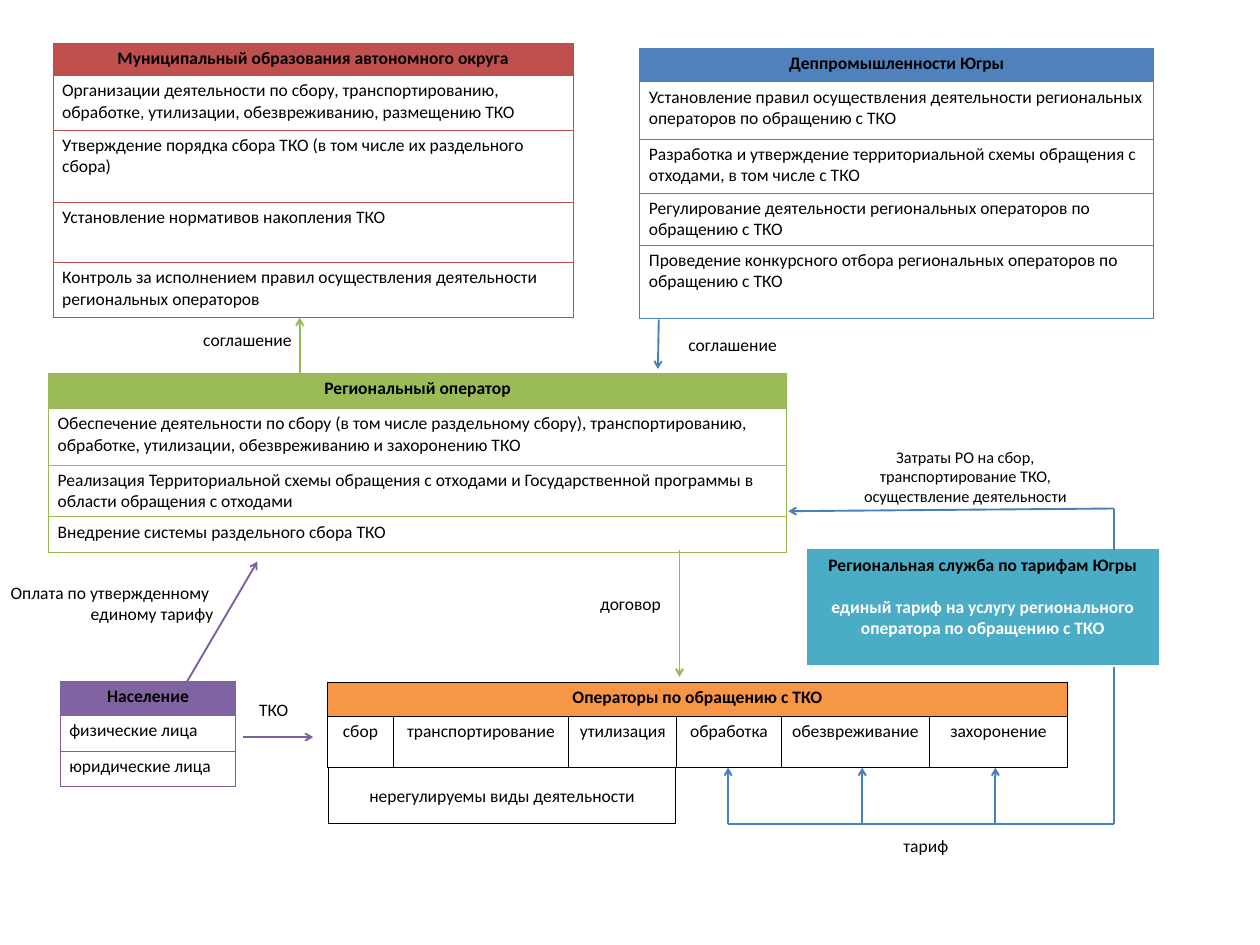
from lxml import etree
from pptx import Presentation
from pptx.dml.color import RGBColor
from pptx.enum.shapes import MSO_CONNECTOR, MSO_SHAPE
from pptx.enum.text import MSO_ANCHOR, PP_ALIGN
from pptx.oxml.ns import qn
from pptx.util import Inches, Pt

LEFT, CENTER, RIGHT = PP_ALIGN.LEFT, PP_ALIGN.CENTER, PP_ALIGN.RIGHT
TOP, MIDDLE = MSO_ANCHOR.TOP, MSO_ANCHOR.MIDDLE
STRAIGHT = MSO_CONNECTOR.STRAIGHT
RECTANGLE = MSO_SHAPE.RECTANGLE
BLANK_LAYOUT = 6
FONT = "Calibri"
BLACK, WHITE = "000000", "FFFFFF"
BLUE, GREEN, PURPLE = "4B7EBC", "98B955", "7D60A0"
RED, TEAL = "BF4C48", "46AAC5"


def color(value):
    return RGBColor.from_string(value)


def write(frame, text, size=14, bold=False, ink=BLACK, align=LEFT):
    for index, line in enumerate(text.split("\n")):
        paragraph = frame.paragraphs[0] if index == 0 else frame.add_paragraph()
        paragraph.alignment = align
        run = paragraph.add_run()
        run.text = line
        run.font.name = FONT
        run.font.size = Pt(size)
        run.font.bold = bold
        run.font.color.rgb = color(ink)


def add_label(slide, text, left, top, width, height, wrap=True, margin=0.1, **text_format):
    label = slide.shapes.add_textbox(Inches(left), Inches(top), Inches(width), Inches(height))
    frame = label.text_frame
    frame.word_wrap = wrap
    frame.margin_left = frame.margin_right = Inches(margin)
    write(frame, text, **text_format)


def add_link(slide, start, end, line_color, arrow=True):
    link = slide.shapes.add_connector(STRAIGHT, *map(Inches, start + end))
    link.line.color.rgb = color(line_color)
    link.line.width = Pt(1.5)
    if arrow:
        etree.SubElement(link.line._get_or_add_ln(), qn("a:tailEnd"), type="arrow")
    etree.SubElement(link._element.spPr, qn("a:effectLst"))


def style_cell(cell, fill, border, border_width):
    properties = cell._tc.get_or_add_tcPr()
    for side in ("lnL", "lnR", "lnT", "lnB"):
        line = etree.SubElement(properties, qn(f"a:{side}"), w=str(Pt(border_width)))
        solid = etree.SubElement(line, qn("a:solidFill"))
        etree.SubElement(solid, qn("a:srgbClr"), val=border)
    cell.fill.solid()
    cell.fill.fore_color.rgb = color(fill)


def add_grid(slide, left, top, widths, heights, header_fill, border, border_width=0.75):
    grid = slide.shapes.add_table(
        len(heights), len(widths), Inches(left), Inches(top),
        Inches(sum(widths)), Inches(sum(heights))).table
    grid.first_row = grid.horz_banding = False
    for column, width in zip(grid.columns, widths):
        column.width = Inches(width)
    for index, (row, height) in enumerate(zip(grid.rows, heights)):
        row.height = Inches(height)
        for cell in row.cells:
            style_cell(cell, WHITE if index else header_fill, border, border_width)
    return grid


def add_duties(slide, left, top, width, heights, header_fill, border, header, duties):
    grid = add_grid(slide, left, top, [width], heights, header_fill, border)
    write(grid.cell(0, 0).text_frame, header, bold=True, align=CENTER)
    for index, duty in enumerate(duties, 1):
        write(grid.cell(index, 0).text_frame, duty)


def add_operators(slide):
    activities = ["сбор", "транспортирование", "утилизация",
                  "обработка", "обезвреживание", "захоронение"]
    widths = [0.73, 1.95, 1.2, 1.16, 1.65, 1.53]
    grid = add_grid(slide, 3.64, 7.58, widths, [0.38, 0.57], "F79646", BLACK, 1)
    grid.cell(0, 0).merge(grid.cell(0, len(widths) - 1))
    write(grid.cell(0, 0).text_frame, "Операторы по обращению с ТКО", bold=True, align=CENTER)
    for index, activity in enumerate(activities):
        cell = grid.cell(1, index)
        cell.margin_left = cell.margin_right = Inches(0.05)
        write(cell.text_frame, activity, align=CENTER)


def add_unregulated(slide):
    unregulated = slide.shapes.add_shape(
        RECTANGLE, Inches(3.65), Inches(8.53), Inches(3.86), Inches(0.62))
    unregulated.shadow.inherit = False
    unregulated.fill.solid()
    unregulated.fill.fore_color.rgb = color(WHITE)
    unregulated.line.color.rgb = color(BLACK)
    unregulated.line.width = Pt(1)
    unregulated.text_frame.vertical_anchor = MIDDLE
    write(unregulated.text_frame, "нерегулируемы виды деятельности", align=CENTER)


def add_tariff_service(slide):
    cell = add_grid(slide, 8.97, 6.11, [3.9], [1.27], "4BACC6", TEAL).cell(0, 0)
    cell.vertical_anchor = TOP
    frame = cell.text_frame
    write(frame, "Региональная служба по тарифам Югры\n"
                 "единый тариф на услугу регионального\n"
                 "оператора по обращению с ТКО", bold=True, align=CENTER)
    for paragraph in frame.paragraphs[1:]:
        paragraph.runs[0].font.color.rgb = color(WHITE)
    frame.paragraphs[1].space_before = Pt(17)


def add_flows(slide):
    tariff_x, tariff_y = 12.38, 9.16
    add_link(slide, (tariff_x, 7.41), (tariff_x, tariff_y), BLUE, arrow=False)
    add_link(slide, (8.09, tariff_y), (tariff_x, tariff_y), BLUE, arrow=False)
    for x in (8.09, 9.58, 11.06):
        add_link(slide, (x, tariff_y), (x, 8.53), BLUE)
    add_link(slide, (tariff_x, 6.11), (tariff_x, 5.65), BLUE, arrow=False)
    add_link(slide, (tariff_x, 5.65), (8.76, 5.68), BLUE)
    add_link(slide, (2.7, 8.19), (3.48, 8.19), PURPLE)
    add_link(slide, (2.08, 7.57), (2.86, 6.24), PURPLE)
    add_link(slide, (7.55, 6.11), (7.55, 7.52), GREEN)
    add_link(slide, (7.32, 3.55), (7.31, 4.1), BLUE)
    add_link(slide, (3.33, 4.16), (3.33, 3.53), GREEN)


def add_flow_labels(slide):
    add_label(slide, "тариф", 9.94, 9.23, 0.86, 0.34)
    for text, left, top, width in (
            ("ТКО", 2.78, 7.72, 0.53),
            ("соглашение", 2.16, 3.61, 1.2),
            ("соглашение", 7.55, 3.66, 1.2),
            ("договор", 6.57, 6.54, 0.89)):
        add_label(slide, text, left, top, width, 0.34, wrap=False)
    add_label(slide, "Оплата по утвержденному \nединому тарифу",
              0, 6.42, 2.37, 0.57, margin=0, align=RIGHT)
    add_label(slide, "Затраты РО на сбор, транспортирование ТКО, осуществление деятельности",
              9.27, 4.92, 2.91, 0.76, size=13, align=CENTER)


def main():
    presentation = Presentation()
    presentation.slide_width = Inches(14)
    presentation.slide_height = Inches(10.5)
    slide = presentation.slides.add_slide(presentation.slide_layouts[BLANK_LAYOUT])

    add_duties(slide, 7.11, 0.54, 5.71, [0.37, 0.64, 0.6, 0.57, 0.81], "4F81BD", BLUE,
               "Деппромышленности Югры", [
                   "Установление правил осуществления деятельности региональных операторов по обращению с ТКО",
                   "Разработка и утверждение территориальной схемы обращения с отходами, в том числе с ТКО",
                   "Регулирование деятельности региональных операторов по обращению с ТКО",
                   "Проведение конкурсного отбора региональных операторов по обращению с ТКО"])
    add_duties(slide, 0.59, 0.48, 5.78, [0.36, 0.61, 0.8, 0.67, 0.61], "C0504D", RED,
               "Муниципальный образования автономного округа", [
                   "Организации деятельности по сбору, транспортированию, обработке, утилизации, "
                   "обезвреживанию, размещению ТКО",
                   "Утверждение порядка сбора ТКО (в том числе их раздельного сбора)",
                   "Установление нормативов накопления ТКО",
                   "Контроль за исполнением правил осуществления деятельности региональных операторов"])
    add_duties(slide, 0.54, 4.15, 8.2, [0.39, 0.63, 0.57, 0.39], "9BBB59", GREEN,
               "Региональный оператор", [
                   "Обеспечение деятельности по сбору (в том числе раздельному сбору), транспортированию, "
                   "обработке, утилизации, обезвреживанию и захоронению ТКО",
                   "Реализация Территориальной схемы обращения с отходами и Государственной программы "
                   "в области обращения с отходами",
                   "Внедрение системы раздельного сбора ТКО"])
    add_duties(slide, 0.67, 7.57, 1.95, [0.38, 0.4, 0.39], "8064A2", PURPLE,
               "Население", ["физические лица", "юридические лица"])
    add_operators(slide)
    add_unregulated(slide)
    add_tariff_service(slide)
    add_flows(slide)
    add_flow_labels(slide)
    presentation.save("out.pptx")


if __name__ == "__main__":
    main()
